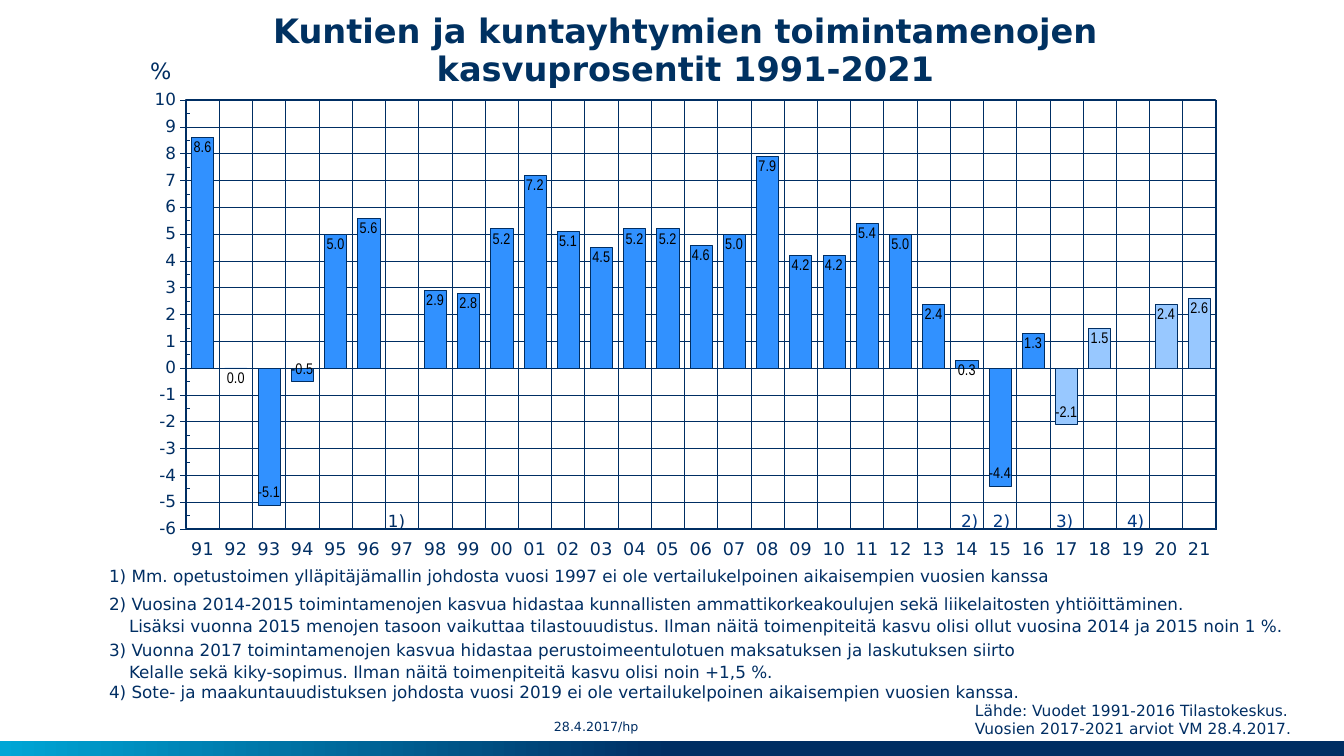
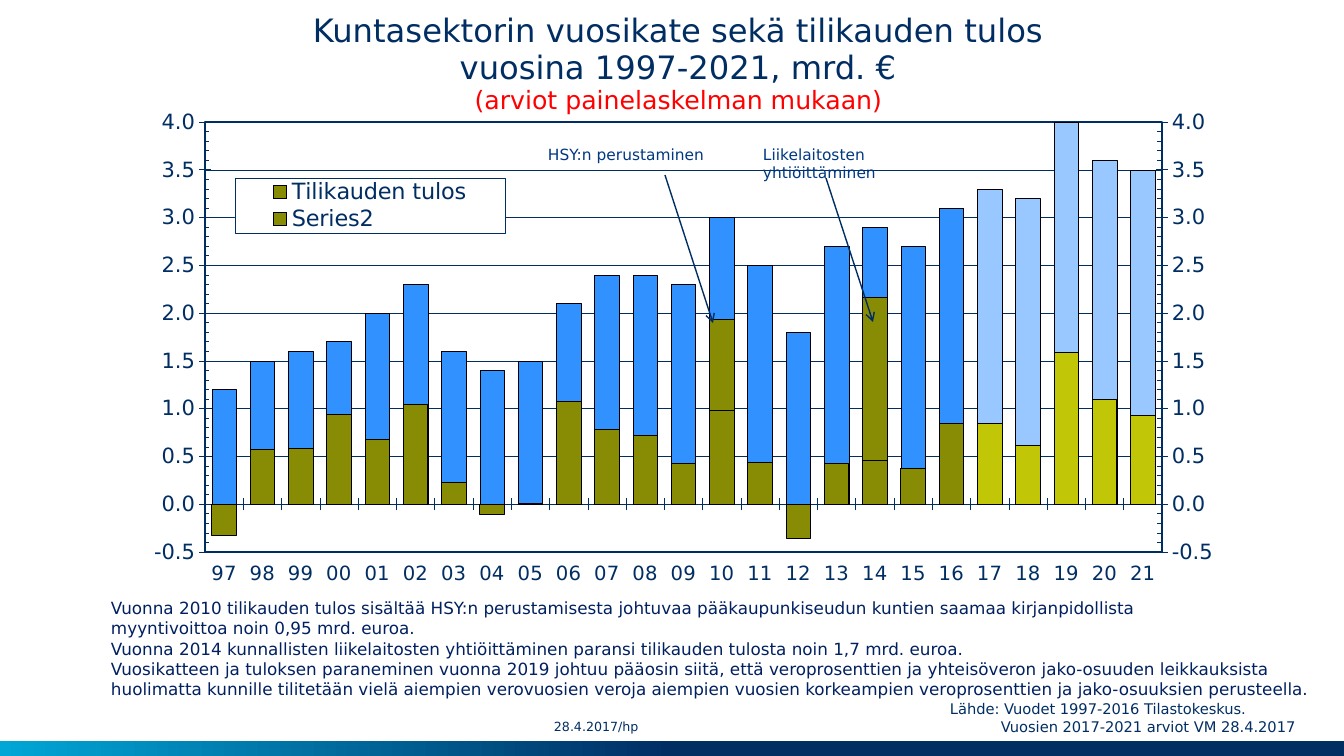
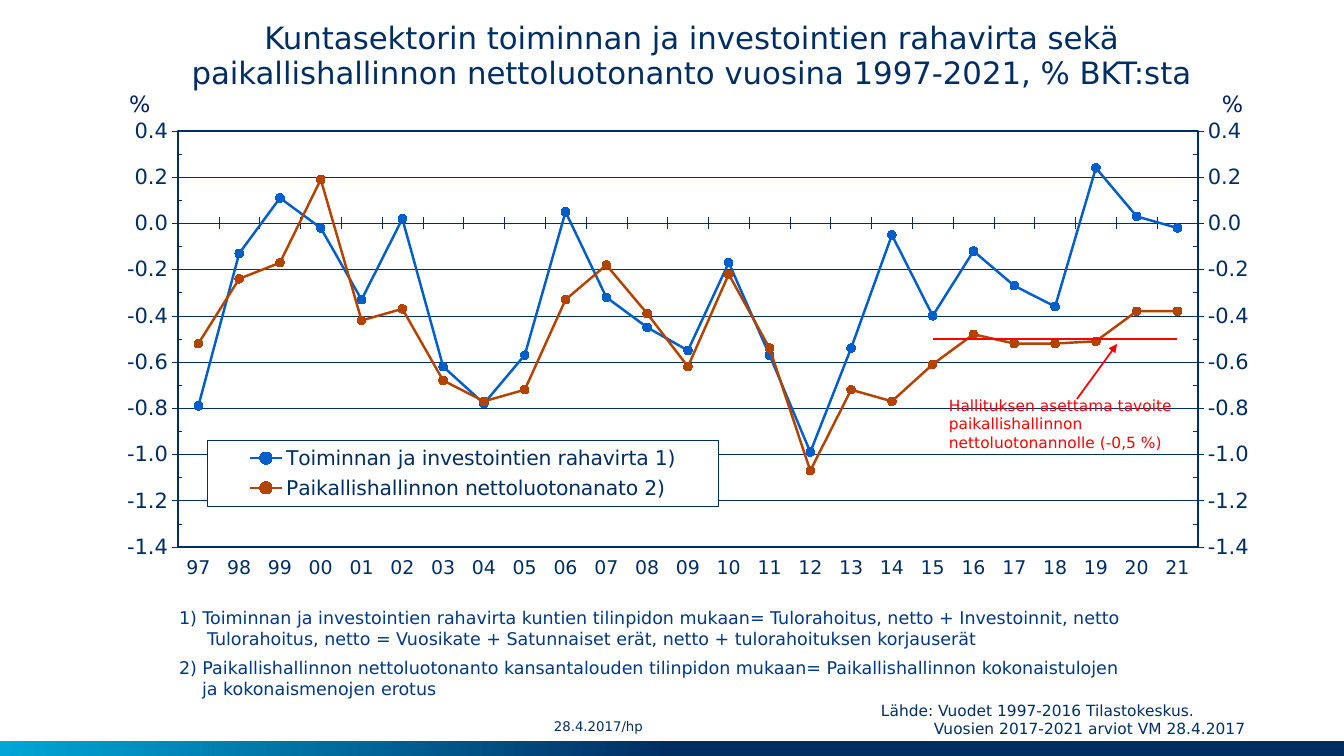
"""Build three slides on Finnish municipal finances."""
from copy import deepcopy
from dataclasses import dataclass
from typing import Optional

from pptx import Presentation
from pptx.chart.data import CategoryChartData
from pptx.dml.color import RGBColor
from pptx.enum.chart import (XL_CHART_TYPE, XL_LABEL_POSITION, XL_LEGEND_POSITION,
                             XL_MARKER_STYLE, XL_TICK_LABEL_POSITION, XL_TICK_MARK)
from pptx.enum.dml import MSO_LINE
from pptx.enum.shapes import MSO_CONNECTOR, MSO_SHAPE
from pptx.enum.text import MSO_ANCHOR, MSO_AUTO_SIZE, PP_ALIGN
from pptx.oxml import parse_xml
from pptx.oxml.ns import nsdecls, qn
from pptx.util import Emu, Pt

STACKED = XL_CHART_TYPE.COLUMN_STACKED
CLUSTERED = XL_CHART_TYPE.COLUMN_CLUSTERED
LINES = XL_CHART_TYPE.LINE_MARKERS
OUT, CROSS, INSIDE = XL_TICK_MARK.OUTSIDE, XL_TICK_MARK.CROSS, XL_TICK_MARK.INSIDE
LOW = XL_TICK_LABEL_POSITION.LOW
INSIDE_END = XL_LABEL_POSITION.INSIDE_END
RIGHT = XL_LEGEND_POSITION.RIGHT
CIRCLE, NO_MARKER = XL_MARKER_STYLE.CIRCLE, XL_MARKER_STYLE.NONE
DOTTED = MSO_LINE.ROUND_DOT
STRAIGHT = MSO_CONNECTOR.STRAIGHT
RECTANGLE = MSO_SHAPE.RECTANGLE
TOP, MIDDLE = MSO_ANCHOR.TOP, MSO_ANCHOR.MIDDLE
CENTER = PP_ALIGN.CENTER
NO_AUTOFIT = MSO_AUTO_SIZE.NONE

WIDTH, HEIGHT = 1344, 756
SCALE = 12192000 / WIDTH
LAST_YEAR, FORECAST_YEAR = 2021, 2017


@dataclass(frozen=True)
class Theme:
    """Colours, fonts and type sizes of the deck."""
    font: str = "DejaVu Sans"
    label_font: str = "Arial Narrow"
    navy: str = "002E63"
    title_navy: str = "003161"
    deep_navy: str = "002060"
    blue: str = "003882"
    cyan: str = "00A6D6"
    red: str = "FF0000"
    black: str = "000000"
    white: str = "FFFFFF"
    bar: str = "3191FF"
    bar_forecast: str = "98C8FF"
    olive: str = "888C04"
    olive_forecast: str = "C1C606"
    line_blue: str = "005ECA"
    line_rust: str = "B54300"
    note: float = 12
    callout: float = 11
    unit: float = 16
    date: float = 9


T = Theme()


@dataclass(frozen=True)
class Box:
    """A rectangle in px."""
    x: int
    y: int
    w: int
    h: int

    def emu(self) -> tuple:
        """Return left, top, width and height in EMU."""
        return tuple(px(v) for v in (self.x, self.y, self.w, self.h))


@dataclass(frozen=True)
class Line:
    """One paragraph; unset format falls back to that of its box."""
    text: str
    before: float = 0
    left: int = 0
    spacing: Optional[float] = None
    size: Optional[float] = None
    color: Optional[str] = None


@dataclass(frozen=True)
class Series:
    """One chart series with its colours."""
    name: str
    values: tuple
    color: str
    forecast: Optional[str] = None
    outline: str = T.black
    width: float = 0.25
    marker: bool = True


@dataclass(frozen=True)
class ChartSpec:
    """Everything that sets one chart apart from the others."""
    kind: int
    frame: Box
    plot: Box
    first_year: int
    series: tuple
    scale: tuple
    cat_size: float
    val_size: float
    tick: int = CROSS
    number_format: str = "0.0"
    gap: int = 50
    axis_width: float = 0.3
    border: float = 1.25
    vertical_grid: bool = False
    value_labels: bool = False
    on_right: int = 0
    legend: Optional[Box] = None
    legend_size: float = 16
    hidden_entry: int = 0


def px(value: float) -> Emu:
    """Turn px into EMU."""
    return Emu(round(value * SCALE))


def rgb(color: str) -> RGBColor:
    """Turn a hex string into a colour."""
    return RGBColor.from_string(color)


def set_font(font, size: float, color: str, bold: bool = False, name: str = T.font) -> None:
    """Format a font."""
    font.name, font.size, font.bold = name, Pt(size), bold
    font.color.rgb = rgb(color)


def set_line(line, color: str, width: float) -> None:
    """Format an outline or a rule."""
    line.color.rgb = rgb(color)
    line.width = Pt(width)


def write(tf, lines, *, size: float, color: str = T.navy, bold: bool = False, align=None,
          spacing: float = 1.0, anchor=TOP, inset: bool = True) -> None:
    """Fill a text frame with one paragraph per line."""
    tf.word_wrap, tf.auto_size, tf.vertical_anchor = True, NO_AUTOFIT, anchor
    tf.margin_left = tf.margin_right = px(10 if inset else 0)
    tf.margin_top = tf.margin_bottom = px(5 if inset else 0)
    for i, item in enumerate(lines):
        line = Line(item) if isinstance(item, str) else item
        p = tf.add_paragraph() if i else tf.paragraphs[0]
        pPr = p._p.get_or_add_pPr()
        pPr.set("marL", str(px(line.left)))
        pPr.set("indent", "0")
        pPr.append(parse_xml(f"<a:buNone {nsdecls('a')}/>"))
        p.alignment = align
        p.line_spacing = line.spacing or spacing
        p.space_before = Pt(line.before)
        r = p.add_run()
        r.text = line.text
        set_font(r.font, line.size or size, line.color or color, bold)


def add_text(s, box: Box, *lines, **fmt) -> None:
    """Add a text box."""
    write(s.shapes.add_textbox(*box.emu()).text_frame, lines, **fmt)


def fill_placeholder(sp, box: Box, lines, **fmt) -> None:
    """Move a placeholder and write into it."""
    sp.left, sp.top, sp.width, sp.height = box.emu()
    write(sp.text_frame, lines, **fmt)


def add_arrow(s, start: tuple, end: tuple, color: str, width: float, head: str) -> None:
    """Add a straight arrow."""
    c = s.shapes.add_connector(STRAIGHT, *(px(v) for v in start + end))
    set_line(c.line, color, width)
    c.line._get_or_add_ln().append(parse_xml(f'<a:tailEnd {nsdecls("a")} type="{head}"/>'))
    c._element.spPr.append(parse_xml(f"<a:effectLst {nsdecls('a')}/>"))


def area_format(fill: Optional[str], line: Optional[str], width: float = 0):
    """Return the shape properties of a chart part."""
    def paint(color: Optional[str]) -> str:
        """Return a solid fill or none."""
        return f'<a:solidFill><a:srgbClr val="{color}"/></a:solidFill>' if color else "<a:noFill/>"
    return parse_xml(f'<c:spPr {nsdecls("c", "a")}>{paint(fill)}'
                     f'<a:ln w="{Pt(width)}">{paint(line)}</a:ln></c:spPr>')


def manual_layout(box: Box, frame: Box, target: str = ""):
    """Return a layout that puts a chart part at a box on the slide."""
    parts = {"x": (box.x - frame.x) / frame.w, "y": (box.y - frame.y) / frame.h,
             "w": box.w / frame.w, "h": box.h / frame.h}
    modes = "".join(f'<c:{k}Mode val="edge"/>' for k in "xy")
    sizes = "".join(f'<c:{k} val="{v:.4f}"/>' for k, v in parts.items())
    return parse_xml(f'<c:layout {nsdecls("c")}><c:manualLayout>{target}{modes}{sizes}'
                     "</c:manualLayout></c:layout>")


def drop(parent, tag: str) -> None:
    """Remove the children that have a tag."""
    for child in parent.findall(qn(tag)):
        parent.remove(child)


def style_axis(axis, spec: ChartSpec, size: float, grid: bool) -> None:
    """Format an axis and its gridlines."""
    axis.visible = True
    axis.major_tick_mark = spec.tick
    set_font(axis.tick_labels.font, size, T.navy)
    set_line(axis.format.line, T.navy, spec.axis_width)
    axis.has_major_gridlines = grid
    if grid:
        set_line(axis.major_gridlines.format.line, T.navy, 0.25)
        axis.major_gridlines.format.line.dash_style = DOTTED


def style_bars(ser, look: Series, first_year: int) -> None:
    """Colour a column series, with forecast years lighter."""
    ser.invert_if_negative = False
    parts = [(ser, look.color)]
    if look.forecast:
        years = range(FORECAST_YEAR, LAST_YEAR + 1)
        parts += [(ser.points[y - first_year], look.forecast) for y in years]
    for part, color in parts:
        part.format.fill.solid()
        part.format.fill.fore_color.rgb = rgb(color)
        set_line(part.format.line, look.outline, look.width)


def style_line(ser, look: Series) -> None:
    """Colour a line series and its markers."""
    ser.smooth = False
    set_line(ser.format.line, look.color, look.width)
    ser.marker.style = CIRCLE if look.marker else NO_MARKER
    if look.marker:
        ser.marker.size = 6
        ser.marker.format.fill.solid()
        ser.marker.format.fill.fore_color.rgb = rgb(look.color)
        set_line(ser.marker.format.line, look.color, 0.75)


def add_right_axis(chart, count: int, grouping: str) -> None:
    """Move the last series of a chart to a second axis on the right."""
    area = chart._chartSpace.chart.plotArea
    left = chart.plots[0]._element
    right = deepcopy(left)
    left.addnext(right)
    pairs = list(zip(left.findall(qn("c:ser")), right.findall(qn("c:ser"))))
    for i, (here, there) in enumerate(pairs):
        if i < len(pairs) - count:
            right.remove(there)
        else:
            left.remove(here)
    right.find(qn("c:grouping")).set("val", grouping)
    val = area.find(qn("c:valAx"))
    cat2, val2 = deepcopy(area.find(qn("c:catAx"))), deepcopy(val)
    val.addnext(cat2)
    cat2.addnext(val2)
    for part in (right, cat2, val2):
        for node in part.iter(qn("c:axId"), qn("c:crossAx")):
            node.set("val", str(int(node.get("val")) + 1))
    cat2.find(qn("c:delete")).set("val", "1")
    drop(val2, "c:majorGridlines")
    val2.find(qn("c:axPos")).set("val", "r")
    val2.find(qn("c:crosses")).set("val", "max")


def add_legend(chart, spec: ChartSpec) -> None:
    """Add a boxed legend that leaves one series out."""
    chart.has_legend = True
    legend = chart.legend
    legend.position, legend.include_in_layout = RIGHT, False
    set_font(legend.font, spec.legend_size, T.navy)
    node = legend._element
    drop(node, "c:layout")
    pos = node.find(qn("c:legendPos"))
    pos.addnext(manual_layout(spec.legend, spec.frame))
    pos.addnext(parse_xml(f'<c:legendEntry {nsdecls("c")}><c:idx val="{spec.hidden_entry}"/>'
                          '<c:delete val="1"/></c:legendEntry>'))
    node.find(qn("c:overlay")).addnext(area_format(T.white, T.navy, 0.25))


def add_chart(s, spec: ChartSpec) -> None:
    """Add a chart."""
    data = CategoryChartData()
    data.categories = [f"{y % 100:02d}" for y in range(spec.first_year, LAST_YEAR + 1)]
    for look in spec.series:
        data.add_series(look.name, look.values)
    chart = s.shapes.add_chart(spec.kind, *spec.frame.emu(), data).chart
    chart.has_title = chart.has_legend = False
    set_font(chart.font, spec.val_size, T.navy)
    cat, val, plot = chart.category_axis, chart.value_axis, chart.plots[0]
    style_axis(cat, spec, spec.cat_size, spec.vertical_grid)
    style_axis(val, spec, spec.val_size, True)
    cat.tick_label_position = LOW
    val.minimum_scale, val.maximum_scale, val.major_unit, val.minor_unit = spec.scale
    val.minor_tick_mark = INSIDE
    val.tick_labels.number_format = spec.number_format
    val.tick_labels.number_format_is_linked = False
    drop(val._element, "c:crossBetween")
    val._element.find(qn("c:crosses")).addnext(
        parse_xml(f'<c:crossBetween {nsdecls("c")} val="between"/>'))
    plot.vary_by_categories = False
    is_line = spec.kind == LINES
    if not is_line:
        plot.gap_width = spec.gap
        plot.overlap = 100
    for ser, look in zip(plot.series, spec.series):
        if is_line:
            style_line(ser, look)
        else:
            style_bars(ser, look, spec.first_year)
    if spec.value_labels:
        plot.has_data_labels = True
        labels = plot.data_labels
        labels.show_value, labels.position = True, INSIDE_END
        labels.number_format, labels.number_format_is_linked = "0.0", False
        set_font(labels.font, 11, T.black, name=T.label_font)
    if spec.on_right:
        add_right_axis(chart, spec.on_right, "standard" if is_line else "stacked")
    if spec.legend:
        add_legend(chart, spec)
    area = chart._chartSpace.chart.plotArea
    drop(area, "c:layout")
    area.insert(0, manual_layout(spec.plot, spec.frame, '<c:layoutTarget val="inner"/>'))
    area.append(area_format(None, T.navy, spec.border))
    chart._chartSpace.chart.addnext(area_format(None, None))


def add_band(prs, s) -> None:
    """Put the gradient band on the slide master."""
    sp = s.shapes.add_shape(RECTANGLE, *Box(0, 741, WIDTH, 15).emu())
    sp.shadow.inherit = False
    sp.line.fill.background()
    sp.fill.gradient()
    sp.fill.gradient_angle = 180
    for stop, position, color in zip(sp.fill.gradient_stops, (0.5, 1), (T.navy, T.cyan)):
        stop.position, stop.color.rgb = position, rgb(color)
    prs.slide_master.element.cSld.spTree.append(sp._element)


def add_slide(prs, title: tuple, notes: tuple, source: tuple, date_size: float = T.date):
    """Add a slide with its title, notes, source and date, each given as box, lines, format."""
    s = prs.slides.add_slide(prs.slide_layouts[1])
    box, lines, fmt = title
    fill_placeholder(s.shapes.title, box, lines, align=CENTER, spacing=0.95, inset=False, **fmt)
    box, lines, fmt = notes
    fill_placeholder(s.placeholders[1], box, lines, **fmt)
    box, lines, fmt = source
    add_text(s, box, *lines, **fmt)
    add_text(s, Box(554, 712, 200, 29), "28.4.2017/hp", size=date_size, anchor=MIDDLE, inset=False)
    return s


def growth_slide(prs):
    """Build the slide on growth of operating expenditure."""
    s = add_slide(
        prs,
        (Box(236, 13, 899, 77), ("Kuntien ja kuntayhtymien toimintamenojen",
                                 "kasvuprosentit 1991-2021"),
         dict(size=24, color=T.title_navy, bold=True)),
        (Box(99, 561, 1221, 140), (
            "1) Mm. opetustoimen ylläpitäjämallin johdosta vuosi 1997 ei ole vertailukelpoinen aikaisempien vuosien kanssa",
            Line("2) Vuosina 2014-2015 toimintamenojen kasvua hidastaa kunnallisten ammattikorkeakoulujen sekä liikelaitosten yhtiöittäminen.", before=4, spacing=1.1),
            Line("Lisäksi vuonna 2015 menojen tasoon vaikuttaa tilastouudistus. Ilman näitä toimenpiteitä kasvu olisi ollut vuosina 2014 ja 2015 noin 1 %.", left=20, spacing=1.1),
            Line("3) Vuonna 2017 toimintamenojen kasvua hidastaa perustoimeentulotuen maksatuksen ja laskutuksen siirto", before=1, spacing=1.1),
            Line("Kelalle sekä kiky-sopimus. Ilman näitä toimenpiteitä kasvu olisi noin +1,5 %.", left=20, spacing=1.1),
            "4) Sote- ja maakuntauudistuksen johdosta vuosi 2019 ei ole vertailukelpoinen aikaisempien vuosien kanssa."),
         dict(size=T.note)),
        (Box(965, 696, 365, 47), ("Lähde: Vuodet 1991-2016 Tilastokeskus.",
                                  "Vuosien 2017-2021 arviot VM 28.4.2017."), dict(size=11)))
    growth = (8.6, 0, -5.1, -0.5, 5, 5.6, None, 2.9, 2.8, 5.2, 7.2, 5.1, 4.5, 5.2, 5.2, 4.6, 5, 7.9,
              4.2, 4.2, 5.4, 5, 2.4, 0.3, -4.4, 1.3, -2.1, 1.5, None, 2.4, 2.6)
    add_chart(s, ChartSpec(
        STACKED, Box(140, 90, 1080, 488), Box(186, 100, 1030, 429), 1991,
        (Series("Series 1", growth, T.bar, T.bar_forecast, T.navy),), (-6, 10, 1, 0.5), 12.5, 12,
        tick=OUT, number_format="0", axis_width=0.25, border=0.75, vertical_grid=True,
        value_labels=True))
    add_text(s, Box(140, 52, 44, 37), "%", size=T.unit)
    for mark, x, color in (("1)", 378, T.navy), ("2)", 951, T.blue), ("2)", 983, T.blue),
                           ("3)", 1046, T.blue), ("4)", 1117, T.blue)):
        add_text(s, Box(x, 506, 39, 30), mark, size=T.note, color=color)
    return s


def result_slide(prs) -> None:
    """Build the slide on annual margin and result."""
    s = add_slide(
        prs,
        (Box(196, 13, 965, 103), ("Kuntasektorin vuosikate sekä tilikauden tulos",
                                  "vuosina 1997-2021, mrd. €",
                                  Line("(arviot painelaskelman mukaan)", size=18, color=T.red)),
         dict(size=23)),
        (Box(101, 593, 1231, 112), (
            "Vuonna 2010 tilikauden tulos sisältää HSY:n perustamisesta johtuvaa pääkaupunkiseudun kuntien saamaa kirjanpidollista",
            "myyntivoittoa noin 0,95 mrd. euroa.",
            "Vuonna 2014 kunnallisten liikelaitosten yhtiöittäminen paransi tilikauden tulosta noin 1,7 mrd. euroa.",
            "Vuosikatteen ja tuloksen paraneminen vuonna 2019 johtuu pääosin siitä, että veroprosenttien ja yhteisöveron jako-osuuden leikkauksista huolimatta kunnille tilitetään vielä aiempien verovuosien veroja aiempien vuosien korkeampien veroprosenttien ja jako-osuuksien perusteella."),
         dict(size=T.note, color=T.deep_navy)),
        (Box(940, 695, 402, 47), ("Lähde: Vuodet 1997-2016 Tilastokeskus.",
                                  Line("Vuosien 2017-2021 arviot VM 28.4.2017", left=51)),
         dict(size=10.5)))
    margin = (1.2, 1.5, 1.6, 1.7, 2, 2.3, 1.6, 1.4, 1.5, 2.1, 2.4, 2.4, 2.3, 3, 2.5, 1.8, 2.7, 2.9,
              2.7, 3.1, 3.3, 3.2, 4, 3.6, 3.5)
    result = (-0.33, 0.57, 0.58, 0.94, 0.68, 1.04, 0.23, -0.11, 0.01, 1.08, 0.78, 0.72, 0.43, 0.98,
              0.44, -0.36, 0.43, 0.46, 0.37, 0.84, 0.84, 0.62, 1.59, 1.1, 0.93)
    one_off = tuple({2010: 0.95, 2014: 1.7}.get(y) for y in range(1997, LAST_YEAR + 1))
    add_chart(s, ChartSpec(
        CLUSTERED, Box(140, 69, 1088, 532), Box(205, 122, 957, 430), 1997,
        (Series("Vuosikate", margin, T.bar, T.bar_forecast),
         Series("Series2", result, T.olive, T.olive_forecast, width=0.5),
         Series("Tilikauden tulos", one_off, T.olive, width=0.5)),
        (-0.5, 4, 0.5, 0.1), 14, 15, gap=56, on_right=2, legend=Box(235, 178, 270, 55)))
    add_text(s, Box(753, 140, 134, 47), "Liikelaitosten", "yhtiöittäminen", size=T.callout, color=T.blue)
    add_text(s, Box(538, 140, 182, 29), "HSY:n perustaminen", size=T.callout, color=T.blue)
    add_arrow(s, (826, 178), (873, 322), T.navy, 1, "arrow")
    add_arrow(s, (665, 175), (713, 323), T.navy, 1, "arrow")


def cash_flow_slide(prs) -> None:
    """Build the slide on cash flow and net lending."""
    s = add_slide(
        prs,
        (Box(116, 21, 1151, 71), ("Kuntasektorin toiminnan ja investointien rahavirta sekä",
                                  "paikallishallinnon nettoluotonanto vuosina 1997-2021, % BKT:sta"),
         dict(size=22)),
        (Box(169, 602, 1067, 104), (
            "1) Toiminnan ja investointien rahavirta kuntien tilinpidon mukaan= Tulorahoitus, netto + Investoinnit, netto",
            Line("Tulorahoitus, netto = Vuosikate + Satunnaiset erät, netto + tulorahoituksen korjauserät", left=28),
            Line("2) Paikallishallinnon nettoluotonanto kansantalouden tilinpidon mukaan= Paikallishallinnon kokonaistulojen", before=5.5),
            Line("ja kokonaismenojen erotus", left=23)),
         dict(size=12.5, color=T.blue)),
        (Box(871, 696, 469, 47), ("Lähde: Vuodet 1997-2016 Tilastokeskus.",
                                  Line("Vuosien 2017-2021 arviot VM 28.4.2017", left=53)),
         dict(size=11)), date_size=9.5)
    cash_flow = (-0.79, -0.13, 0.11, -0.02, -0.33, 0.02, -0.62, -0.78, -0.57, 0.05, -0.32, -0.45, -0.55,
                 -0.17, -0.57, -0.99, -0.54, -0.05, -0.4, -0.12, -0.27, -0.36, 0.24, 0.03, -0.02)
    lending = (-0.52, -0.24, -0.17, 0.19, -0.42, -0.37, -0.68, -0.77, -0.72, -0.33, -0.18, -0.39, -0.62,
               -0.22, -0.54, -1.07, -0.72, -0.77, -0.61, -0.48, -0.52, -0.52, -0.51, -0.38, -0.38)
    target = (None,) * 18 + (-0.5,) * 7
    add_chart(s, ChartSpec(
        LINES, Box(109, 116, 1159, 478), Box(178, 131, 1020, 416), 1997,
        (Series("Toiminnan ja investointien rahavirta 1)", cash_flow, T.line_blue, width=1.75),
         Series("Paikallishallinnon nettoluotonanato 2)", lending, T.line_rust, width=1.75),
         Series("Series 3", target, T.red, width=1.5, marker=False)),
        (-1.4, 0.4, 0.2, 0.1), 13.5, 15, on_right=2,
        legend=Box(207, 440, 511, 66), legend_size=14.5, hidden_entry=2))
    add_text(s, Box(939, 391, 260, 67), "Hallituksen asettama tavoite", "paikallishallinnon",
             "nettoluotonannolle (-0,5 %)", size=T.callout, color=T.red)
    add_arrow(s, (1077, 399), (1117, 344), T.red, 1.25, "triangle")
    for x in (119, 1212):
        add_text(s, Box(x, 85, 44, 37), "%", size=T.unit, color=T.deep_navy)


def main() -> None:
    """Build and save the deck."""
    prs = Presentation()
    prs.slide_width, prs.slide_height = px(WIDTH), px(HEIGHT)
    add_band(prs, growth_slide(prs))
    result_slide(prs)
    cash_flow_slide(prs)
    prs.save("out.pptx")


if __name__ == "__main__":
    main()
